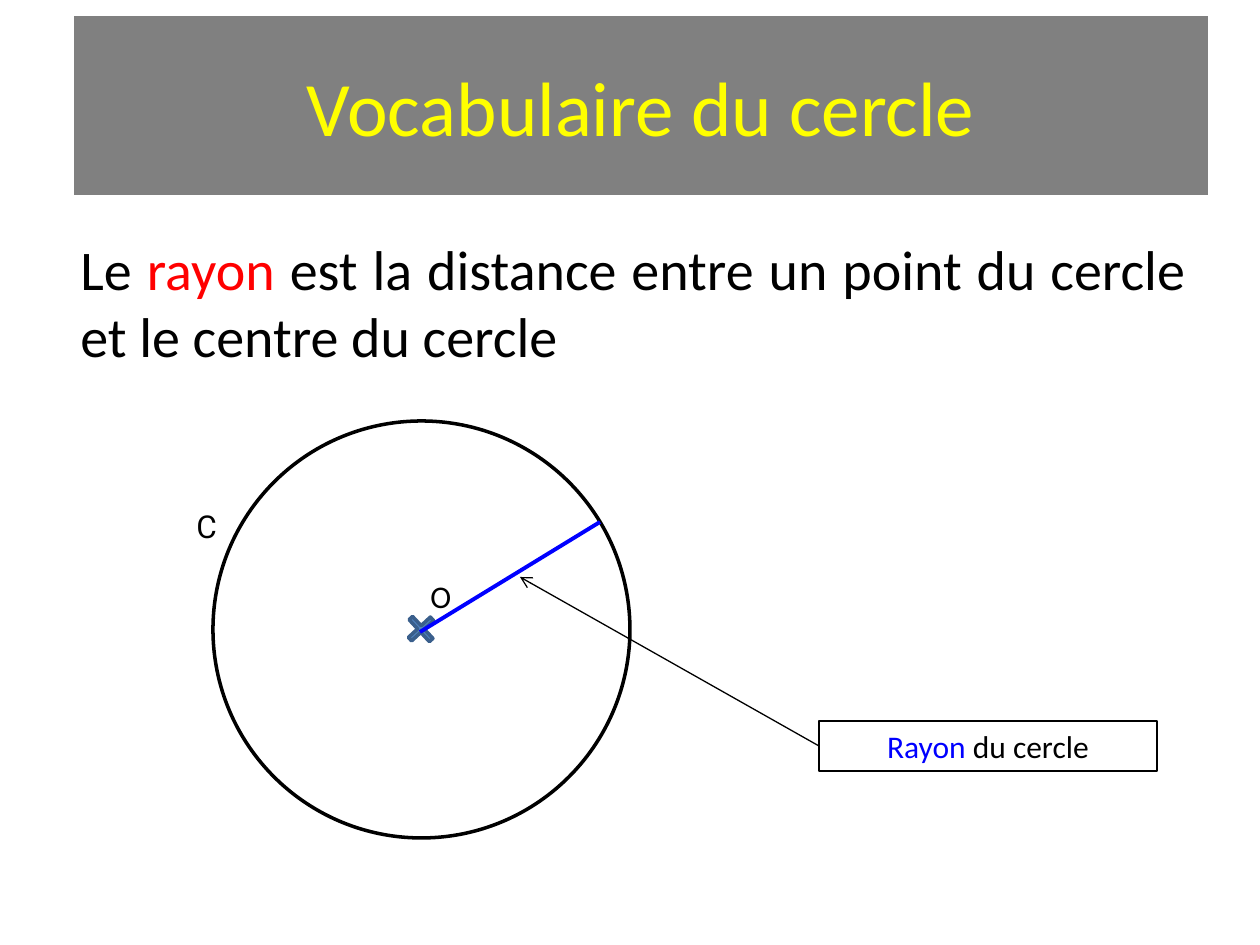
"""Build a slide that defines the radius of a circle with a labelled figure."""
from dataclasses import dataclass

from lxml.etree import SubElement
from pptx import Presentation
from pptx.dml.color import RGBColor
from pptx.enum.shapes import MSO_CONNECTOR as Connector, MSO_SHAPE as Shape
from pptx.enum.text import MSO_ANCHOR as Anchor, PP_ALIGN as Align
from pptx.oxml.ns import qn
from pptx.util import Emu, Pt


@dataclass(frozen=True)
class Theme:
    font: str = "Calibri"
    circle_font: str = "Roboto"
    title_size: int = 44
    body_size: int = 32
    label_size: int = 18
    band: str = "808080"
    title: str = "FFFF00"
    ink: str = "000000"
    paper: str = "FFFFFF"
    key: str = "FF0000"
    radius: str = "0000FF"
    mark: str = "4F81BD"
    mark_edge: str = "3A5F8C"


THEME = Theme()
SCALE = 914400 / 126
SLIDE_SIZE = (1260, 945)

TITLE = [("Vocabulaire du cercle", THEME.title)]
DEFINITION = [
    ("Le ", THEME.ink),
    ("rayon", THEME.key),
    (" est la distance entre un point du cercle et le centre du cercle", THEME.ink),
]
LABEL = [("Rayon", THEME.radius), (" du cercle", THEME.ink)]
CENTRE_NAME = [("O", THEME.ink)]
CIRCLE_NAME = [("C", THEME.ink)]

TITLE_BOX = (74, 16, 1134, 179)
DEFINITION_BOX = (68, 228, 1131, 149)
LABEL_BOX = (819, 721, 338, 50)
CENTRE_NAME_BOX = (418, 571, 49, 50)
CIRCLE_NAME_BOX = (184, 462, 113, 89)
CIRCLE_BOX = (213, 421, 417, 417)
MARK_SIDE = 30
RADIUS_ENDS = ((420, 632), (600, 522))
ARROW_TIP = (520, 577)


def px(*lengths):
    return [Emu(round(length * SCALE)) for length in lengths]


def color(value):
    return RGBColor.from_string(value)


def write(holder, runs, size, align=Align.LEFT, anchor=Anchor.TOP, font=THEME.font):
    frame = holder.text_frame
    frame.word_wrap = True
    frame.vertical_anchor = anchor
    paragraph = frame.paragraphs[0]
    paragraph.alignment = align
    for words, ink in runs:
        run = paragraph.add_run()
        run.text = words
        run.font.name = font
        run.font.size = Pt(size)
        run.font.color.rgb = color(ink)


def add_figure(slide, kind, box, edge, width, fill=None):
    figure = slide.shapes.add_shape(kind, *px(*box))
    figure.shadow.inherit = False
    if fill:
        figure.fill.solid()
        figure.fill.fore_color.rgb = color(fill)
    else:
        figure.fill.background()
    figure.line.color.rgb = color(edge)
    figure.line.width = Pt(width)
    return figure


def add_line(slide, start, end, ink, width, arrow=False):
    line = slide.shapes.add_connector(Connector.STRAIGHT, *px(*start, *end))
    line.line.color.rgb = color(ink)
    line.line.width = Pt(width)
    if arrow:
        SubElement(line.line._get_or_add_ln(), qn("a:tailEnd"), type="arrow")
    SubElement(line._element.spPr, qn("a:effectLst"))


def add_title(slide):
    title = slide.shapes.title
    title.left, title.top, title.width, title.height = px(*TITLE_BOX)
    title.fill.solid()
    title.fill.fore_color.rgb = color(THEME.band)
    write(title, TITLE, THEME.title_size, Align.CENTER, Anchor.MIDDLE)


def add_circle(slide):
    add_figure(slide, Shape.OVAL, CIRCLE_BOX, THEME.ink, 2)
    left, top, width, height = CIRCLE_BOX
    mark_box = (
        left + (width - MARK_SIDE) // 2,
        top + (height - MARK_SIDE) // 2,
        MARK_SIDE,
        MARK_SIDE,
    )
    mark = add_figure(slide, Shape.CROSS, mark_box, THEME.mark_edge, 2, THEME.mark)
    mark.adjustments[0] = 0.42
    mark.rotation = 317.3

    centre_name = slide.shapes.add_textbox(*px(*CENTRE_NAME_BOX))
    write(centre_name, CENTRE_NAME, THEME.label_size)
    circle_name = slide.shapes.add_textbox(*px(*CIRCLE_NAME_BOX))
    write(circle_name, CIRCLE_NAME, THEME.label_size,
          anchor=Anchor.BOTTOM, font=THEME.circle_font)
    add_line(slide, *RADIUS_ENDS, THEME.radius, 2.25)


def add_label(slide):
    label = add_figure(slide, Shape.RECTANGLE, LABEL_BOX, THEME.ink, 0.75)
    write(label, LABEL, THEME.label_size, Align.CENTER)
    left, top, _, height = LABEL_BOX
    add_line(slide, (left, top + height // 2), ARROW_TIP, THEME.ink, 0.75, arrow=True)


def main():
    deck = Presentation()
    deck.slide_width, deck.slide_height = px(*SLIDE_SIZE)
    slide = deck.slides.add_slide(deck.slide_layouts[5])
    add_title(slide)
    definition = add_figure(slide, Shape.RECTANGLE, DEFINITION_BOX, THEME.paper, 0.75)
    write(definition, DEFINITION, THEME.body_size, Align.JUSTIFY)
    add_circle(slide)
    add_label(slide)
    deck.save("out.pptx")


if __name__ == "__main__":
    main()
